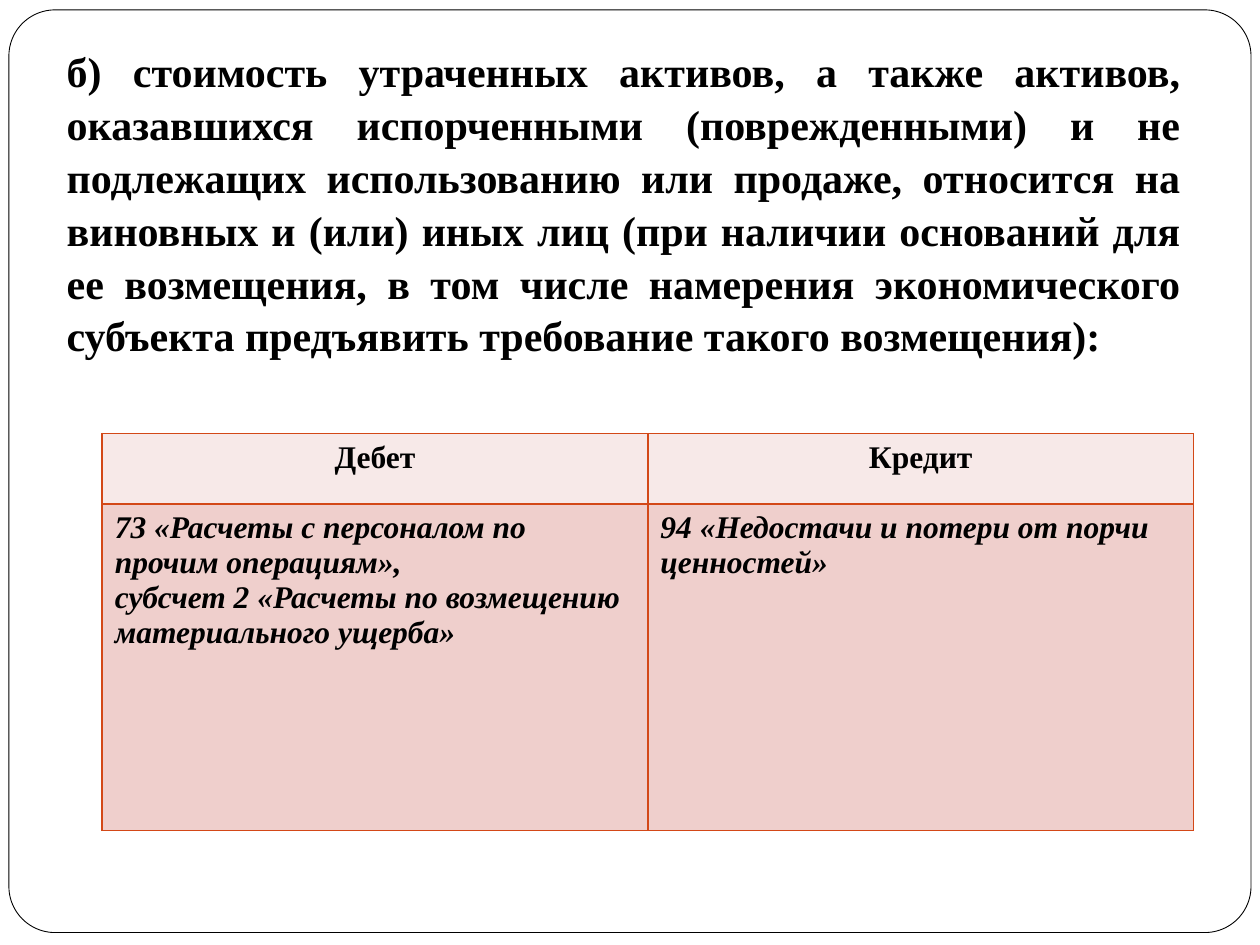
from lxml.etree import SubElement
from pptx import Presentation
from pptx.dml.color import RGBColor as Rgb
from pptx.enum.shapes import MSO_SHAPE as Shape
from pptx.enum.text import MSO_ANCHOR as Anchor, MSO_AUTO_SIZE as Auto, PP_ALIGN as Align
from pptx.oxml.ns import qn
from pptx.util import Cm, Pt

COLORS = {"paper": "FFFFFF", "ink": "000000", "edge": "D34817",
          "head": "F7E9E8", "body": "EFCFCC"}
FONT = {"name": "Times New Roman", "bold": True}


def style(para, size, align, **extra):
    para.alignment = align
    for key, value in {**FONT, "size": Pt(size), **extra}.items():
        setattr(para.font, key, value)
    para.font.color.rgb = Rgb.from_string(COLORS["ink"])


def border(cell):
    props = cell._tc.get_or_add_tcPr()
    for spot, side in enumerate(("lnL", "lnR", "lnT", "lnB")):
        line = SubElement(props, qn(f"a:{side}"), w=str(Pt(1)))
        fill = SubElement(line, qn("a:solidFill"))
        SubElement(fill, qn("a:srgbClr"), val=COLORS["edge"])
        props.insert(spot, line)


deck = Presentation()
deck.slide_width, deck.slide_height = Cm(25.4), Cm(19.05)
slide = deck.slides.add_slide(deck.slide_layouts[5])
shapes = slide.shapes

frame = shapes.add_shape(Shape.ROUNDED_RECTANGLE, Cm(0.18), Cm(0.2), Cm(25.04), Cm(18.6))
frame.adjustments[0] = 0.05
frame.shadow.inherit = False
frame.fill.solid()
frame.fill.fore_color.rgb = Rgb.from_string(COLORS["paper"])
frame.line.color.rgb = Rgb.from_string(COLORS["ink"])
frame.line.width = Pt(0.5)
shapes.title.element.addprevious(frame.element)

title = shapes.title
place = {"left": Cm(1.09), "top": Cm(0.74), "width": Cm(22.96), "height": Cm(6.4)}
for key, value in place.items():
    setattr(title, key, value)
text = title.text_frame
text.text = (
    "б) стоимость утраченных активов, а также активов, оказавшихся испорченными "
    "(поврежденными) и не подлежащих использованию или продаже, относится на виновных "
    "и (или) иных лиц (при наличии оснований для ее возмещения, в том числе намерения "
    "экономического субъекта предъявить требование такого возмещения):"
)
text.word_wrap = True
text.auto_size = Auto.NONE
text.vertical_anchor = Anchor.TOP
style(text.paragraphs[0], 24, Align.JUSTIFY)
text.paragraphs[0].line_spacing = 1.05

rows = [
    ["Дебет", "Кредит"],
    ["73 «Расчеты с персоналом по прочим операциям»,\n"
     "субсчет 2 «Расчеты по возмещению материального ущерба»",
     "94 «Недостачи и потери от порчи ценностей»"],
]
table = shapes.add_table(2, 2, Cm(2.06), Cm(8.74), Cm(22), Cm(8)).table
table.rows[0].height, table.rows[1].height = Cm(1.42), Cm(6.58)
for r, row in enumerate(rows):
    for c, words in enumerate(row):
        cell = table.cell(r, c)
        cell.text = words
        cell.fill.solid()
        cell.fill.fore_color.rgb = Rgb.from_string(COLORS["body" if r else "head"])
        border(cell)
        for para in cell.text_frame.paragraphs:
            style(para, 18, Align.LEFT if r else Align.CENTER, italic=bool(r))
            para.line_spacing = 1 if r else 1.15
        if r == 0:
            for side in ("left", "right", "top", "bottom"):
                setattr(cell, f"margin_{side}", Cm(0.03))

deck.save("out.pptx")
